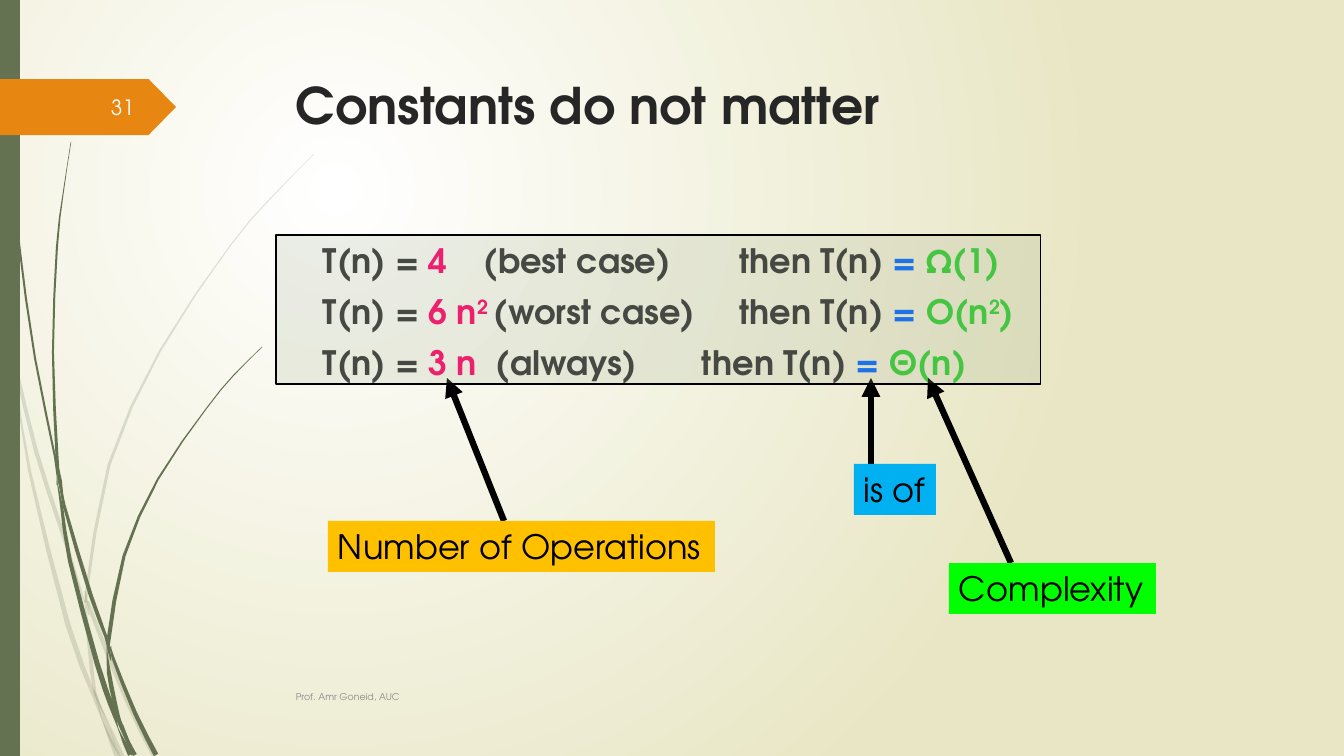
"""Builds the slide "Constants do not matter" on constant factors in complexity."""
from math import hypot

from lxml.etree import SubElement
from pptx import Presentation
from pptx.dml.color import RGBColor
from pptx.enum.shapes import MSO_CONNECTOR, MSO_SHAPE
from pptx.enum.text import MSO_ANCHOR, PP_ALIGN
from pptx.oxml.ns import qn
from pptx.util import Pt

WIDTH, HEIGHT = 1344, 756
SCALE = 12192000 / WIDTH
FONT = "TeX Gyre Adventor"
INK, PINK, BLUE, GREEN = "333333", "FF0066", "0066FF", "33CC33"
BLACK, LEAF, ORANGE = "000000", "647252", "E78712"
GLOW, SAND, SAGE = "FFFFFF", "E8E6C4", "9BAA88"

TITLE = "Constants do not matter"
FOOTER = "Prof. Amr Goneid, AUC"
NUMBER = "31"

# Each row: operations, exponent, case, complexity pieces, tab stops.
ROWS = [
    ("4", "", "(best case)", ("Ω(1)", "", ""), (161, 416)),
    ("6 n", "2", "(worst case)", ("O(n", "2", ")"), (171, 416)),
    ("3 n", "", "(always)", ("Θ(n)", "", ""), (173, 379)),
]

LABELS = [
    ("Number of Operations", "FFC000", (328, 521, 387, 51), (504, 521), (447, 378)),
    ("is of", "00B0F0", (854, 464, 82, 51), (871, 464), (871, 378)),
    ("Complexity", "00FF00", (949, 563, 207, 51), (1011, 563), (928, 378)),
]

# Each blade of grass is a line of (x, y, thickness).
PALE_BLADES = [
    [(0, 292, 3), (10, 352, 1)],
    [(14, 348, 0), (16, 367, 3), (36, 451, 4), (60, 525, 4), (85, 603, 1)],
    [(89, 601, 1), (92, 614, 4), (126, 699, 4), (154, 757, 5)],
    [(106, 717, 0), (114, 737, 3), (122, 757, 5)],
    [(11, 353, 0), (17, 390, 1), (30, 473, 3), (68, 625, 5), (93, 693, 4), (102, 720, 0)],
    [(85, 604, 0), (87, 622, 3), (90, 651, 4), (95, 693, 3), (106, 717, 0)],
    [(314, 154, 0), (270, 199, 1), (230, 246, 1), (160, 351, 2), (109, 465, 3),
     (87, 589, 3), (87, 601, 2)],
    [(102, 720, 0), (110, 739, 3), (117, 757, 5)],
    [(85, 591, 1), (87, 604, 3), (89, 615, 1)],
    [(94, 689, 0), (102, 713, 4), (111, 738, 4), (120, 757, 1)],
]
DARK_BLADES = [
    [(4, 0, 1), (8, 111, 1), (18, 235, 2), (35, 358, 2), (55, 457, 2), (57, 485, 0)],
    [(60, 476, 0), (64, 505, 3), (91, 596, 4), (106, 637, 3), (107, 650, 0)],
    [(111, 646, 0), (113, 658, 3), (135, 713, 4), (156, 755, 5)],
    [(57, 481, 0), (62, 509, 3), (70, 561, 4), (97, 663, 5), (111, 705, 5), (118, 728, 0)],
    [(71, 142, 0), (63, 195, 1), (57, 247, 2), (53, 352, 2), (57, 455, 3), (60, 476, 0)],
    [(123, 725, 0), (128, 740, 2), (135, 755, 4)],
    [(55, 453, 0), (60, 481, 4), (64, 509, 0)],
    [(262, 347, 0), (233, 376, 1), (206, 409, 1), (158, 479, 2), (124, 556, 3),
     (109, 637, 4), (110, 646, 0)],
    [(118, 728, 0), (124, 742, 3), (130, 755, 4)],
    [(107, 650, 0), (109, 673, 4), (115, 703, 4), (122, 725, 0)],
    [(107, 637, 0), (109, 650, 3), (111, 661, 0)],
    [(111, 697, 0), (117, 716, 4), (125, 735, 4), (133, 755, 3)],
]


def px(length):
    return round(length * SCALE)


def color(code):
    return RGBColor.from_string(code)


def paint(shape, code, opacity=100, outline=None):
    shape.shadow.inherit = False
    shape.fill.solid()
    shape.fill.fore_color.rgb = color(code)
    if opacity < 100:
        tint = shape._element.spPr.find(qn("a:solidFill"))[0]
        SubElement(tint, qn("a:alpha"), val=str(opacity * 1000))
    if outline:
        shape.line.color.rgb = color(outline)
        shape.line.width = Pt(0.75)
    else:
        shape.line.fill.background()
    return shape


def add_block(page, kind, area, code, opacity=100, outline=None):
    block = page.shapes.add_shape(kind, *map(px, area))
    return paint(block, code, opacity, outline)


def add_span(para, text, size, code, bold=False, raised=False):
    span = para.add_run()
    span.text = text
    span.font.name = FONT
    span.font.size = Pt(size)
    span.font.bold = bold
    span.font.color.rgb = color(code)
    if raised:
        span.font._element.set("baseline", "30000")


def add_box(page, area, anchor=MSO_ANCHOR.TOP):
    frame = page.shapes.add_textbox(*map(px, area)).text_frame
    frame.word_wrap = True
    frame.vertical_anchor = anchor
    return frame


def smooth(points):
    padded = [points[0], *points, points[-1]]
    curve = []
    for a, b, c, d in zip(padded, padded[1:], padded[2:], padded[3:]):
        middle = [(9 * (q + r) - p - s) / 16 for p, q, r, s in zip(a, b, c, d)]
        curve += [b, middle]
    return curve + [points[-1]]


def add_blade(page, points, opacity):
    curve = smooth(points)
    left, right = [], []
    for index, (x, y, width) in enumerate(curve):
        before, after = curve[max(index - 1, 0)], curve[min(index + 1, len(curve) - 1)]
        run, drop = after[0] - before[0], after[1] - before[1]
        reach = max(width, 0.6) / 2 / hypot(run, drop)
        left.append((max(x - drop * reach, 0), y + run * reach))
        right.append((max(x + drop * reach, 0), y - run * reach))
    outline = [(px(x), px(min(max(y, 0), HEIGHT))) for x, y in left + right[::-1]]
    builder = page.shapes.build_freeform(*outline[0])
    builder.add_line_segments(outline[1:], close=True)
    paint(builder.convert_to_shape(), LEAF, opacity)


def set_background(page):
    fill = page.background.fill
    fill.gradient()
    for stop, code, position in zip(fill.gradient_stops, (GLOW, SAND), (0, 1)):
        stop.color.rgb = color(code)
        stop.position = position
    gradient = page._element.find(".//" + qn("a:gradFill"))
    gradient.remove(gradient.find(qn("a:lin")))
    glow = SubElement(gradient, qn("a:path"), path="circle")
    SubElement(glow, qn("a:fillToRect"), l="50000", t="50000", r="100000", b="100000")


def add_row(para, operations, exponent, case, complexity, stops):
    para.space_before = Pt(7.5)
    tabs = SubElement(para._p.get_or_add_pPr(), qn("a:tabLst"))
    for stop in stops:
        SubElement(tabs, qn("a:tab"), pos=str(px(stop)), algn="l")
    order, power, close = complexity
    pieces = [
        ("T(n) = ", INK, False), (operations, PINK, False), (exponent, PINK, True),
        (f"\t{case}\tthen T(n) ", INK, False), ("= ", BLUE, False),
        (order, GREEN, False), (power, GREEN, True), (close, GREEN, False),
    ]
    for text, code, raised in pieces:
        if text:
            add_span(para, text, 24, code, True, raised)


def add_arrow(page, start, end):
    arrow = page.shapes.add_connector(MSO_CONNECTOR.STRAIGHT, *map(px, start + end))
    arrow.line.color.rgb = color(BLACK)
    arrow.line.width = Pt(4.5)
    SubElement(arrow.line._get_or_add_ln(), qn("a:tailEnd"), type="triangle")
    SubElement(arrow._element.spPr, qn("a:effectLst"))


def add_label(page, text, code, area):
    frame = add_block(page, MSO_SHAPE.RECTANGLE, area, code).text_frame
    frame.word_wrap = False
    frame.paragraphs[0].alignment = PP_ALIGN.LEFT
    add_span(frame.paragraphs[0], text, 24, BLACK)


def main():
    deck = Presentation()
    deck.slide_width, deck.slide_height = px(WIDTH), px(HEIGHT)
    page = deck.slides.add_slide(deck.slide_layouts[6])
    set_background(page)
    for blades, opacity in ((PALE_BLADES, 20), (DARK_BLADES, 100)):
        for points in blades:
            add_blade(page, points, opacity)
    add_block(page, MSO_SHAPE.RECTANGLE, (0, 0, 20, HEIGHT), LEAF)
    flag = add_block(page, MSO_SHAPE.PENTAGON, (0, 79, 176, 56), ORANGE)
    flag.adjustments[0] = 0.49

    footer = add_box(page, (286, 677, 840, 40), MSO_ANCHOR.MIDDLE)
    add_span(footer.paragraphs[0], FOOTER, 6.7, "8C8C8C")
    number = add_box(page, (58, 87, 86, 40), MSO_ANCHOR.MIDDLE)
    number.paragraphs[0].alignment = PP_ALIGN.RIGHT
    add_span(number.paragraphs[0], NUMBER, 15, "FEFFFF")
    title = add_box(page, (286, 69, 983, 141))
    add_span(title.paragraphs[0], TITLE, 36, "262626", True)

    body = add_box(page, (285, 235, 983, 416))
    body.margin_left = px(38)
    for index, row in enumerate(ROWS):
        add_row(body.add_paragraph() if index else body.paragraphs[0], *row)
    for text, code, area, start, end in LABELS:
        add_arrow(page, start, end)
        add_label(page, text, code, area)
    add_block(page, MSO_SHAPE.RECTANGLE, (276, 235, 765, 149), SAGE, 19, BLACK)
    deck.save("out.pptx")


if __name__ == "__main__":
    main()
